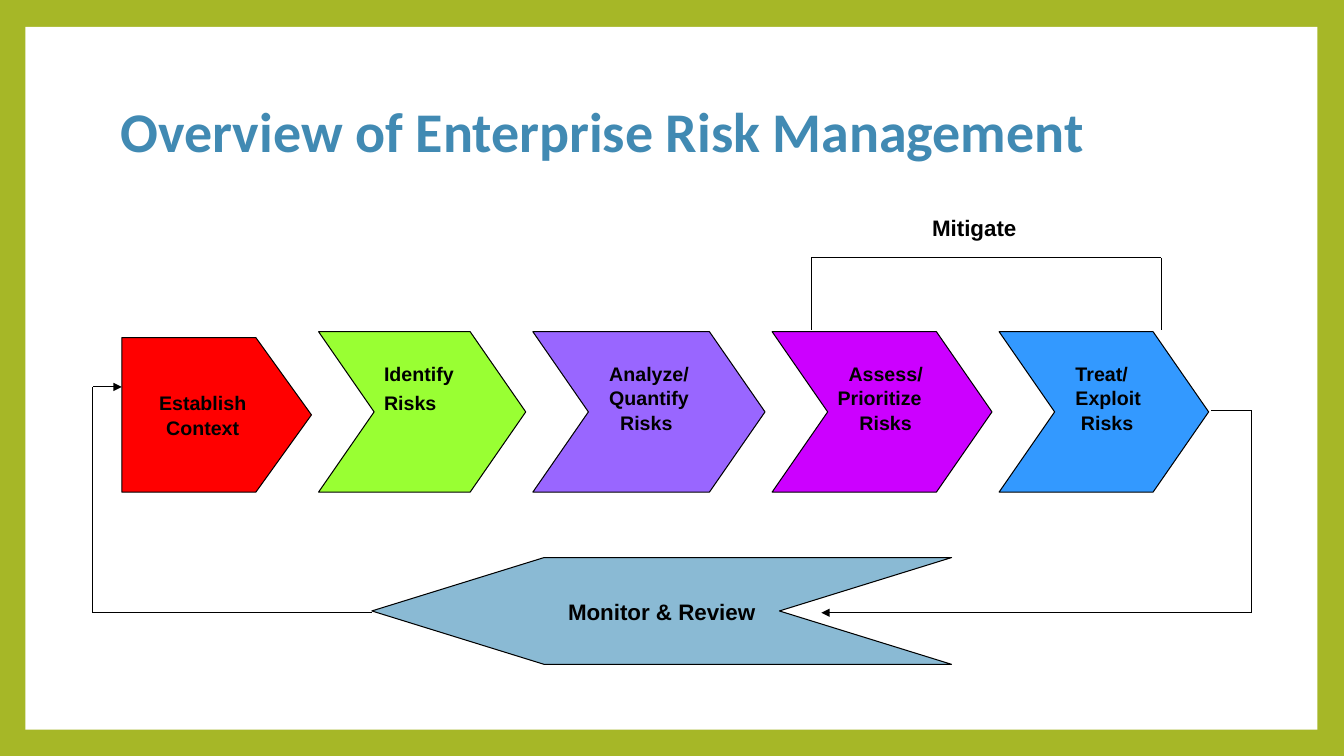
import itertools

import pptx
import pptx.dml.color
import pptx.enum.shapes
import pptx.enum.text
import pptx.oxml.ns
import pptx.util
from lxml import etree

Cm = pptx.util.Cm
Pt = pptx.util.Pt
RGBColor = pptx.dml.color.RGBColor
SHAPE = pptx.enum.shapes.MSO_SHAPE
ANCHOR = pptx.enum.text.MSO_ANCHOR
ALIGN = pptx.enum.text.PP_ALIGN

GREEN = RGBColor(0xA6, 0xB7, 0x27)
WHITE = RGBColor(0xFF, 0xFF, 0xFF)
BLACK = RGBColor(0x00, 0x00, 0x00)
TITLE_BLUE = RGBColor(0x41, 0x8A, 0xB3)
REVIEW_BLUE = RGBColor(0x8A, 0xBA, 0xD4)
RED = RGBColor(0xFF, 0x00, 0x00)
LIME = RGBColor(0x99, 0xFF, 0x33)
VIOLET = RGBColor(0x99, 0x66, 0xFF)
MAGENTA = RGBColor(0xCC, 0x00, 0xFF)
SKY = RGBColor(0x33, 0x99, 0xFF)

STEP_GAP = 0.18
POINT_DEPTH = 1.4
INDENT_UNIT = 3.9
STEPS = [
    (5.22, LIME, [("Identify", 0), ("Risks", 0)], 3.6),
    (5.85, VIOLET, [("Analyze/", 2), ("Quantify", 2), ("Risks", 4)], 0),
    (5.54, MAGENTA, [("Assess/", 2), ("Prioritize", 0), ("Risks", 4)], 0),
    (5.28, SKY, [("Treat/", 2), ("Exploit", 2), ("Risks", 3)], 0),
]


def add_span(para, text, size, color=BLACK, font="Arial"):
    """Add one bold run to a paragraph."""
    span = para.add_run()
    span.text = text
    span.font.name = font
    span.font.size = Pt(size)
    span.font.bold = True
    span.font.color.rgb = color


def add_block(page, kind, box, fill, depth=None):
    """Add a filled shape, outlined when it has a point of the given depth."""
    block = page.shapes.add_shape(kind, *map(Cm, box))
    block.shadow.inherit = False
    block.fill.solid()
    block.fill.fore_color.rgb = fill
    if depth is None:
        block.line.fill.background()
    else:
        block.adjustments[0] = depth / box[3]
        block.line.color.rgb = BLACK
        block.line.width = Pt(0.75)
    return block


def add_centred_lines(block, lines, size):
    """Write lines in the middle of a shape without wrapping."""
    frame = block.text_frame
    frame.word_wrap = False
    frame.vertical_anchor = ANCHOR.MIDDLE
    for index, text in enumerate(lines):
        para = frame.add_paragraph() if index else frame.paragraphs[0]
        para.alignment = ALIGN.CENTER
        para.line_spacing = 1.05
        add_span(para, text, size)


def add_route(page, box, points, arrow=False):
    """Join points, relative to the box, by straight lines."""
    left, top = box[:2]
    for (x1, y1), (x2, y2) in itertools.pairwise(points):
        line = page.shapes.add_connector(
            pptx.enum.shapes.MSO_CONNECTOR.STRAIGHT,
            Cm(left + x1), Cm(top + y1), Cm(left + x2), Cm(top + y2))
        line.line.color.rgb = BLACK
        line.line.width = Pt(0.75)
        properties = line._element.spPr
        etree.SubElement(properties, pptx.oxml.ns.qn("a:effectLst"))
    if arrow:
        outline = line.line._get_or_add_ln()
        etree.SubElement(outline, pptx.oxml.ns.qn("a:tailEnd"), type="triangle")


def add_frame(page, box):
    """Paint the green border and the white panel behind everything."""
    page.background.fill.solid()
    page.background.fill.fore_color.rgb = GREEN
    panel = add_block(page, SHAPE.RECTANGLE, box, WHITE)
    page.shapes._spTree.insert(2, panel._element)


def add_title(page, box):
    """Place and fill the title placeholder."""
    title = page.shapes.title
    title.left, title.top, title.width, title.height = map(Cm, box)
    frame = title.text_frame
    frame.word_wrap = True
    frame.auto_size = pptx.enum.text.MSO_AUTO_SIZE.NONE
    frame.vertical_anchor = ANCHOR.MIDDLE
    para = frame.paragraphs[0]
    para.alignment = ALIGN.LEFT
    para.line_spacing = 0.9
    add_span(para, "Overview of Enterprise Risk Management", 40, TITLE_BLUE, "Calibri")


def add_steps(page, box):
    """Place the row of five process steps from left to right."""
    left, top, width, height = box
    start_width, start_drop = 4.78, 0.15
    start = add_block(page, SHAPE.PENTAGON,
                      (left, top + start_drop, start_width, height - start_drop),
                      RED, POINT_DEPTH)
    add_centred_lines(start, ["Establish", "Context"], 14)
    left += start_width + STEP_GAP
    for step_width, fill, lines, space in STEPS:
        step = add_block(page, SHAPE.CHEVRON, (left, top, step_width, height),
                         fill, POINT_DEPTH)
        frame = step.text_frame
        frame.word_wrap = True
        frame.vertical_anchor = ANCHOR.TOP
        frame.margin_top = Cm(0.72)
        frame.margin_right = 0
        for index, (text, indent) in enumerate(lines):
            para = frame.add_paragraph() if index else frame.paragraphs[0]
            para.alignment = ALIGN.LEFT
            para.line_spacing = 1.05
            para.space_before = Pt(space if index else 0)
            para._p.get_or_add_pPr().set("marL", str(Pt(indent * INDENT_UNIT)))
            add_span(para, text, 14)
        left += step_width + STEP_GAP


def add_mitigate(page, box):
    """Draw the bracket over the last two steps with its label."""
    left, top, width, height = box
    bracket_top = 1.24
    add_route(page, box, [(0, height), (0, bracket_top),
                          (width, bracket_top), (width, height)])
    label = page.shapes.add_textbox(Cm(left + 2.79), Cm(top), Cm(4.78), Cm(1.32))
    label.text_frame.word_wrap = True
    add_span(label.text_frame.paragraphs[0], "Mitigate", 16)


def add_review(page, box):
    """Draw the review arrow and the routes that close the loop."""
    left, top, width, height = box
    arrow_left, arrow_top, arrow_height = 7.03, 4.3, 2.69
    base = arrow_top + 1.39
    review = add_block(page, SHAPE.CHEVRON,
                       (left + arrow_left, top + arrow_top, 14.61, arrow_height),
                       REVIEW_BLUE, 4.34)
    review.rotation = 180
    add_centred_lines(review, ["Monitor & Review"], 16)
    review.text_frame._txBody.bodyPr.set("rot", "10800000")
    add_route(page, box, [(arrow_left, base), (0, base), (0, 0), (0.73, 0)], True)
    add_route(page, box, [(width - 1.02, 0.59), (width, 0.59),
                          (width, base), (18.36, base)], True)


def main():
    """Build the risk management slide."""
    deck = pptx.Presentation()
    deck.slide_width, deck.slide_height = Cm(33.87), Cm(19.05)
    page = deck.slides.add_slide(deck.slide_layouts[5])
    add_frame(page, (0.64, 0.68, 32.56, 17.71))
    add_title(page, (2.79, 1.5, 27.43, 3.76))
    add_steps(page, (3.07, 8.36, 27.39, 4.04))
    add_review(page, (2.34, 9.75, 29.21, 6.99))
    add_mitigate(page, (20.45, 5.26, 8.81, 3.05))
    deck.save("out.pptx")


if __name__ == "__main__":
    main()
